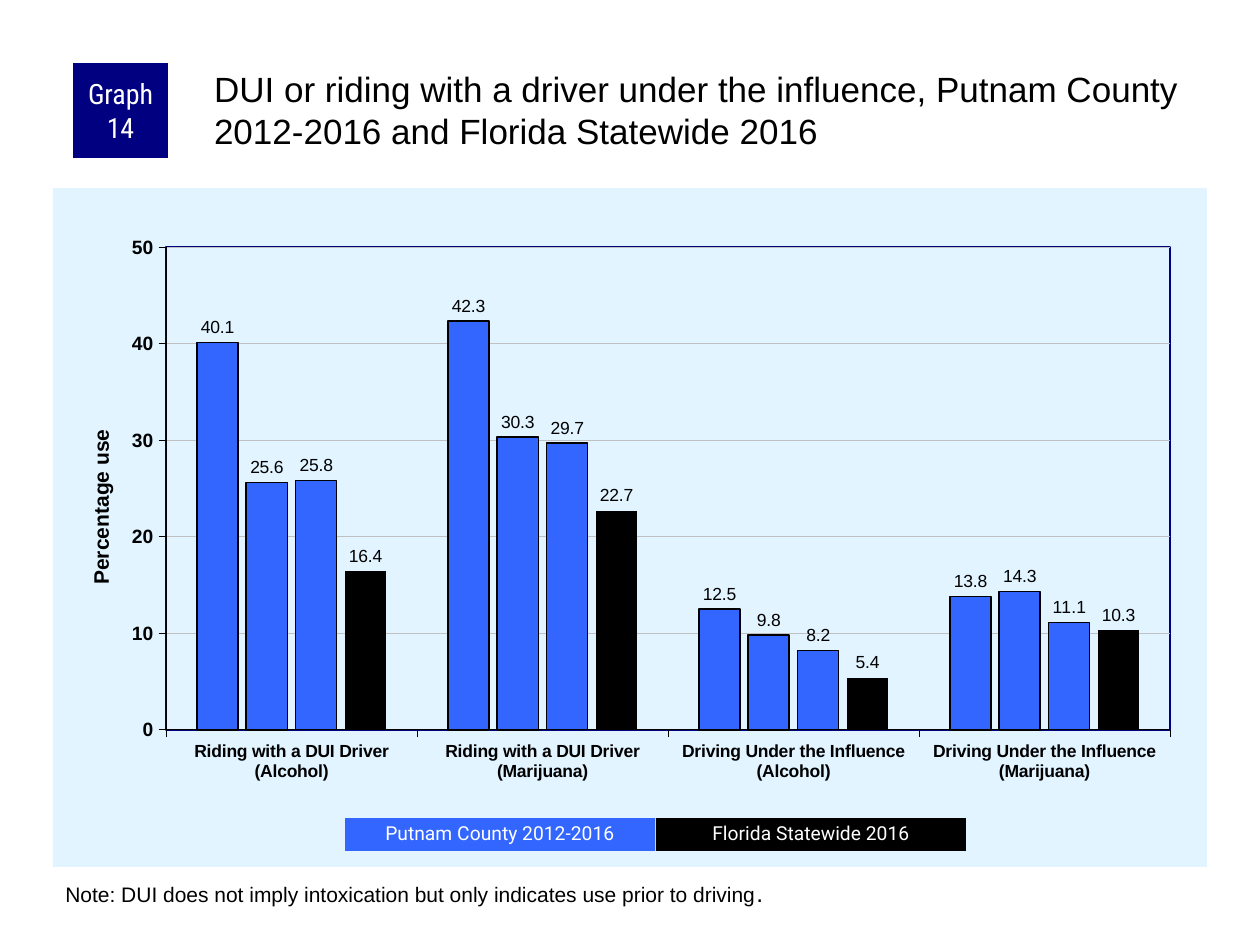
import dataclasses
import typing

import lxml.etree
import pptx
import pptx.chart.data
import pptx.dml.color
import pptx.enum.chart
import pptx.enum.shapes
import pptx.enum.text
import pptx.oxml
import pptx.oxml.ns
import pptx.util

PX = 914400 / 126
COLORS = {
    "county": "3366FF",
    "state": "000000",
    "navy": "000080",
    "panel": "E1F4FF",
    "grid": "C0C0C0",
    "text": "000000",
    "light": "FFFFFF",
}


@dataclasses.dataclass(frozen=True)
class Box:
    left: int
    top: int
    width: int
    height: int

    def emu(self) -> list[int]:
        return [round(n * PX) for n in dataclasses.astuple(self)]


@dataclasses.dataclass(frozen=True)
class Label:
    text: str
    box: Box
    fill: str
    font: str
    size: int
    side_inset: int = 12
    spacing: float = 1.0


@dataclasses.dataclass(frozen=True)
class Survey:
    name: str
    rates: tuple[float, ...]
    fill: str
    outline: typing.Optional[float]


TOPICS = [
    "Riding with a DUI Driver (Alcohol)",
    "Riding with a DUI Driver (Marijuana)",
    "Driving Under the Influence (Alcohol)",
    "Driving Under the Influence (Marijuana)",
]
SURVEYS = [
    Survey("Series 1", (40.1, 42.3, 12.5, 13.8), "county", 1),
    Survey("Series 2", (25.6, 30.3, 9.8, 14.3), "county", 1),
    Survey("Series 3", (25.8, 29.7, 8.2, 11.1), "county", 0.75),
    Survey("Series 4", (16.4, 22.7, 5.4, 10.3), "state", None),
]
LABELS = [
    Label("Graph 14", Box(73, 63, 95, 95), "navy", "Roboto Condensed", 16, 6),
    Label("Putnam County 2012-2016", Box(345, 818, 310, 33), "county", "Roboto", 11, spacing=0.9),
    Label("Florida Statewide 2016", Box(656, 818, 310, 33), "state", "Roboto", 11, spacing=0.9),
]


def rgb(name: str) -> pptx.dml.color.RGBColor:
    return pptx.dml.color.RGBColor.from_string(COLORS[name])


def style_font(font, size: float, color: str = "text", face: str = "Arial", bold: bool = False) -> None:
    font.name = face
    font.size = pptx.util.Pt(size)
    font.bold = bold
    font.color.rgb = rgb(color)


def style_line(line, color: str, width: float) -> None:
    line.color.rgb = rgb(color)
    line.width = pptx.util.Pt(width)


def add_run(paragraph, text: str, size: float, color: str = "text", face: str = "Arial") -> None:
    run = paragraph.add_run()
    run.text = text
    style_font(run.font, size, color, face)


def add_label(slide, label: Label) -> None:
    block = slide.shapes.add_shape(pptx.enum.shapes.MSO_SHAPE.RECTANGLE, *label.box.emu())
    block.shadow.inherit = False
    block.fill.solid()
    block.fill.fore_color.rgb = rgb(label.fill)
    block.line.fill.background()
    frame = block.text_frame
    frame.word_wrap = True
    frame.vertical_anchor = pptx.enum.text.MSO_ANCHOR.MIDDLE
    frame.margin_left = frame.margin_right = round(label.side_inset * PX)
    frame.margin_top = frame.margin_bottom = 0
    paragraph = frame.paragraphs[0]
    paragraph.alignment = pptx.enum.text.PP_ALIGN.CENTER
    paragraph.line_spacing = label.spacing
    add_run(paragraph, label.text, label.size, "light", label.font)


def layout_xml(x: float, y: float, size: tuple[float, ...] = ()) -> lxml.etree._Element:
    target = '<c:layoutTarget val="inner"/>' if size else ""
    extent = "".join(f'<c:{tag} val="{value}"/>' for tag, value in zip("wh", size))
    return pptx.oxml.parse_xml(
        f'<c:layout {pptx.oxml.ns.nsdecls("c")}><c:manualLayout>{target}'
        f'<c:xMode val="edge"/><c:yMode val="edge"/>'
        f'<c:x val="{x}"/><c:y val="{y}"/>{extent}</c:manualLayout></c:layout>'
    )


def area_xml(fill: str, line: str) -> lxml.etree._Element:
    return pptx.oxml.parse_xml(
        f'<c:spPr {pptx.oxml.ns.nsdecls("c", "a")}>{fill}{line}</c:spPr>'
    )


def solid(color: str) -> str:
    return f'<a:solidFill><a:srgbClr val="{COLORS[color]}"/></a:solidFill>'


def place_chart_areas(chart) -> None:
    space = chart.element
    space.chart.addnext(area_xml(solid("panel"), "<a:ln><a:noFill/></a:ln>"))
    plot_area = space.chart.plotArea
    for old in plot_area.findall(pptx.oxml.ns.qn("c:layout")):
        plot_area.remove(old)
    plot_area.insert(0, layout_xml(0.098, 0.087, (0.87, 0.711)))
    plot_area.append(area_xml("<a:noFill/>", f'<a:ln w="12700">{solid("navy")}</a:ln>'))


def style_axes(chart) -> None:
    for axis, size in ((chart.category_axis, 10), (chart.value_axis, 11)):
        axis.major_tick_mark = pptx.enum.chart.XL_TICK_MARK.OUTSIDE
        axis.minor_tick_mark = pptx.enum.chart.XL_TICK_MARK.NONE
        style_font(axis.tick_labels.font, size, bold=True)
        style_line(axis.format.line, "text", 0.25)
    usage = chart.value_axis
    usage.minimum_scale, usage.maximum_scale, usage.major_unit = 0, 50, 10
    usage.tick_labels.number_format = "0"
    usage.tick_labels.number_format_is_linked = False
    usage.has_major_gridlines = True
    style_line(usage.major_gridlines.format.line, "grid", 0.25)
    caption = usage.axis_title
    caption_run = caption.text_frame.paragraphs[0].add_run()
    caption_run.text = "Percentage use"
    style_font(caption_run.font, 12, bold=True)
    body = caption.text_frame._txBody.bodyPr
    body.set("rot", "-5400000")
    body.set("vert", "horz")
    title_xml = caption._element
    for old in title_xml.findall(pptx.oxml.ns.qn("c:layout")):
        title_xml.remove(old)
    title_xml.find(pptx.oxml.ns.qn("c:tx")).addnext(layout_xml(0.027, 0.35))


def add_usage_chart(slide) -> None:
    data = pptx.chart.data.CategoryChartData(number_format="0.0")
    data.categories = TOPICS
    for survey in SURVEYS:
        data.add_series(survey.name, survey.rates)
    chart = slide.shapes.add_chart(
        pptx.enum.chart.XL_CHART_TYPE.COLUMN_CLUSTERED, *Box(53, 188, 1154, 679).emu(), data
    ).chart
    chart.has_legend = False
    chart.has_title = False
    style_font(chart.font, 11.5)
    bars = chart.plots[0]
    bars.gap_width, bars.overlap, bars.vary_by_categories = 150, -20, False
    for series, survey in zip(bars.series, SURVEYS):
        series.invert_if_negative = False
        series.format.fill.solid()
        series.format.fill.fore_color.rgb = rgb(survey.fill)
        if survey.outline:
            style_line(series.format.line, "text", survey.outline)
        else:
            series.format.line.fill.background()
        values = series.data_labels
        values.show_value = True
        values.number_format = "0.0"
        values.number_format_is_linked = False
        values.position = pptx.enum.chart.XL_LABEL_POSITION.OUTSIDE_END
        style_font(values.font, 10)
    style_axes(chart)
    place_chart_areas(chart)


def set_heading(slide) -> None:
    heading = slide.shapes.title
    heading.left, heading.top, heading.width, heading.height = Box(210, 63, 998, 105).emu()
    frame = heading.text_frame
    frame.word_wrap = True
    frame.auto_size = pptx.enum.text.MSO_AUTO_SIZE.NONE
    frame.vertical_anchor = pptx.enum.text.MSO_ANCHOR.TOP
    frame.margin_left = frame.margin_top = round(4 * PX)
    frame.margin_right = frame.margin_bottom = 0
    paragraph = frame.paragraphs[0]
    paragraph.alignment = pptx.enum.text.PP_ALIGN.LEFT
    add_run(
        paragraph,
        "DUI or riding with a driver under the influence, Putnam County 2012-2016 and Florida Statewide 2016",
        20,
    )


def add_note(slide) -> None:
    frame = slide.shapes.add_textbox(*Box(53, 872, 1155, 43).emu()).text_frame
    frame.word_wrap = True
    frame.auto_size = pptx.enum.text.MSO_AUTO_SIZE.SHAPE_TO_FIT_TEXT
    paragraph = frame.paragraphs[0]
    add_run(paragraph, "Note: DUI does not imply intoxication but only indicates use prior to driving", 12)
    add_run(paragraph, ".", 14)


def main() -> None:
    deck = pptx.Presentation()
    deck.slide_width, deck.slide_height = round(1260 * PX), round(945 * PX)
    slide = deck.slides.add_slide(deck.slide_layouts[5])
    add_usage_chart(slide)
    set_heading(slide)
    add_note(slide)
    for label in LABELS:
        add_label(slide, label)
    deck.save("out.pptx")


if __name__ == "__main__":
    main()
